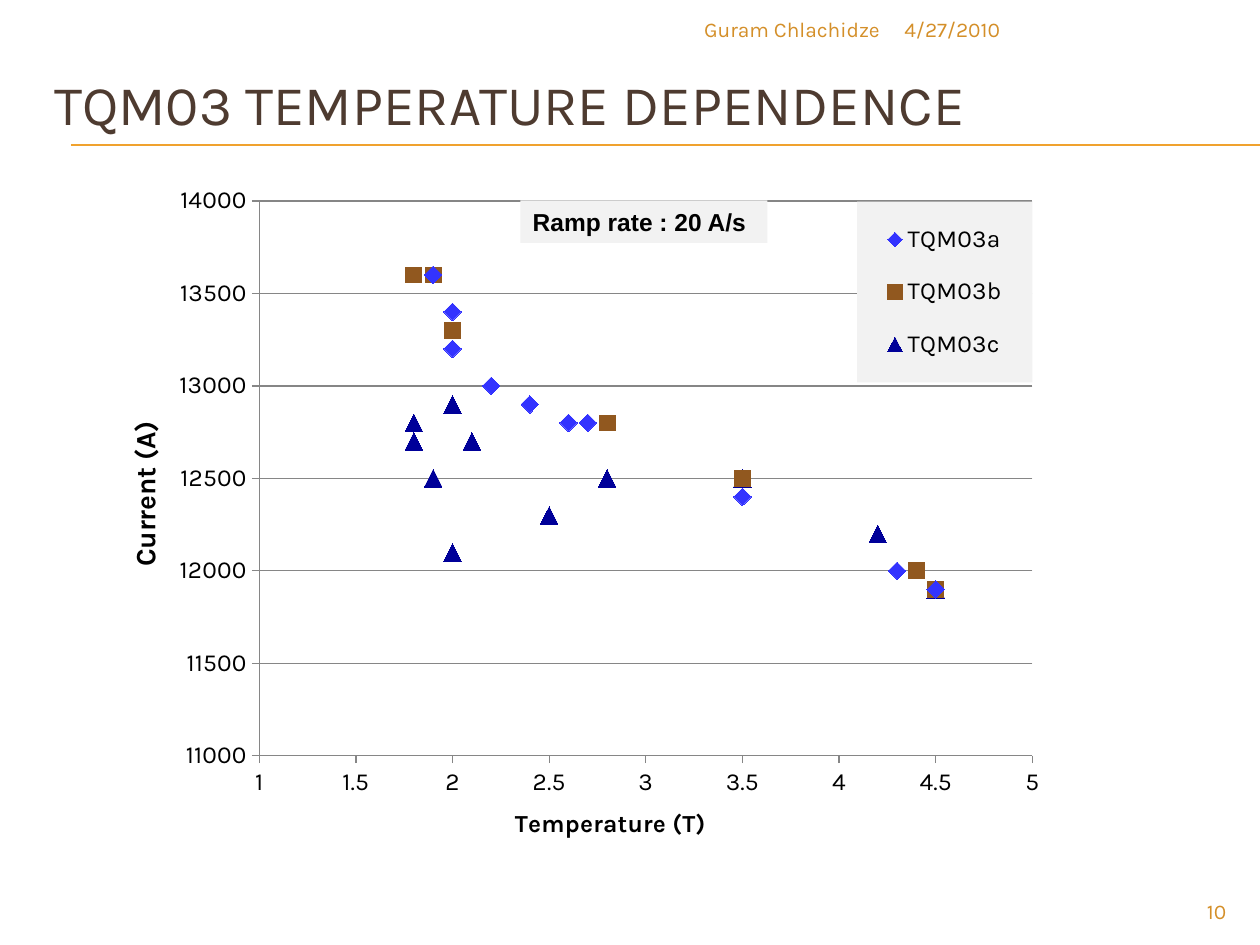
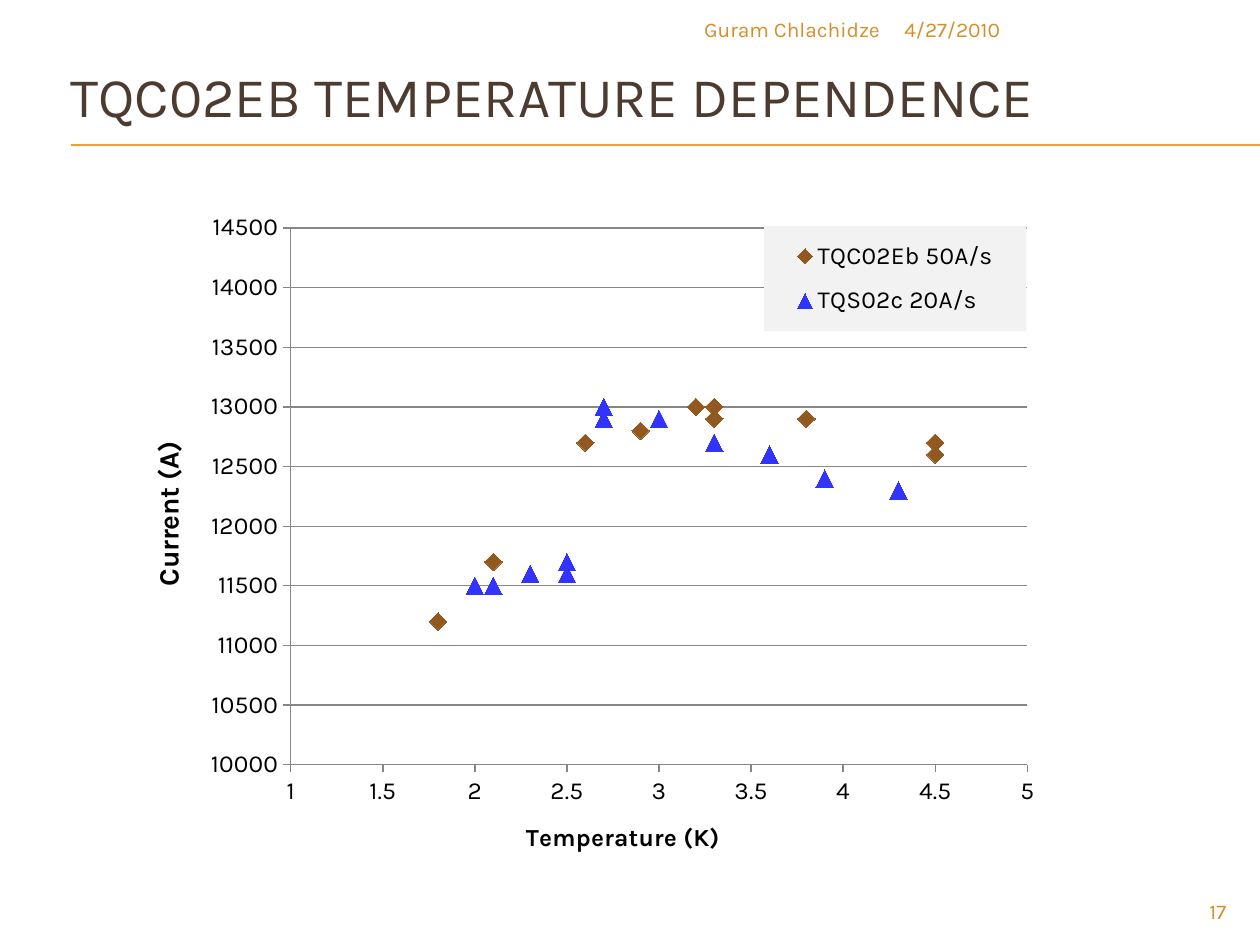
from dataclasses import dataclass
from typing import Optional

from lxml import etree
from pptx import Presentation
from pptx.chart.data import XyChartData
from pptx.dml.color import RGBColor
from pptx.enum.chart import XL_CHART_TYPE, XL_LEGEND_POSITION, XL_MARKER_STYLE, XL_TICK_MARK
from pptx.enum.shapes import MSO_CONNECTOR, MSO_SHAPE
from pptx.enum.text import MSO_ANCHOR, PP_ALIGN
from pptx.oxml.ns import qn
from pptx.util import Cm, Pt

SCATTER = XL_CHART_TYPE.XY_SCATTER
DIAMOND = XL_MARKER_STYLE.DIAMOND
SQUARE = XL_MARKER_STYLE.SQUARE
TRIANGLE = XL_MARKER_STYLE.TRIANGLE
LEFT, RIGHT = PP_ALIGN.LEFT, PP_ALIGN.RIGHT
TOP, MIDDLE = MSO_ANCHOR.TOP, MSO_ANCHOR.MIDDLE

FONT = "Karla"
GOLD, OCHRE, COCOA = "F0A22E", "D48F29", "4E3B30"
BLUE, BROWN, NAVY = "3333FF", "91581F", "000099"
BLACK, PALE, GREY = "000000", "F2F2F2", "868686"
NA = None  # reading not taken

Box = tuple[float, float, float, float]
Point = tuple[float, float]


@dataclass
class Series:
    name: str
    marker: XL_MARKER_STYLE
    size: int
    color: str
    temperatures: list[Optional[float]]
    currents: list[Optional[int]]


@dataclass
class ScatterSlide:
    title: str
    title_box: Box
    number: int
    chart_box: Box
    plot: Box               # fractions of the chart, as are the next three
    legend: Box
    x_title_at: Point
    y_title_at: Point
    x_title: str
    y_range: tuple[int, int]
    series: list[Series]
    note: Optional[str] = None


SLIDES = [
    ScatterSlide(
        "TQM03 TEMPERATURE DEPENDENCE", (0.84, 0.91, 24.13, 2.34), 10,
        chart_box=(2.46, 3.61, 18.69, 13.46),
        plot=(0.148, 0.033, 0.834, 0.832),
        legend=(0.793, 0.034, 0.189, 0.271),
        x_title_at=(0.419, 0.936), y_title_at=(0, 0.356),
        x_title="Temperature (T)", y_range=(11000, 14000),
        series=[
            Series("TQM03a", DIAMOND, 10, BLUE,
                   [4.5, 4.5, 1.9, 1.9, NA, 2.7, NA, 2.2, 2.2, 2.6, 2.6, 3.5, 3.5, NA, 4.5, 4.5,
                    NA, NA, 1.9, 1.9, 2, 2, 2, 2.1, NA, 2.4, 2.2, NA, 4.3, NA, 4.4],
                   [NA, NA, 13600, NA, NA, 12800, NA, 13000, NA, NA, 12800, NA, 12400, NA,
                    11900, NA, NA, NA, 13600, NA, NA, 13400, 13200, NA, NA, 12900, NA, NA,
                    12000, NA, NA]),
            Series("TQM03b", SQUARE, 9, BROWN,
                   [4.4, 4.4, NA, 1.9, 1.8, NA, 1.9, NA, 2, 2, 2.7, 2.8, 3.5, 3.5, 4.5, NA],
                   [12000, NA, NA, 13600, 13600, NA, NA, NA, 13300, NA, NA, 12800, 12500, NA,
                    11900, 11900]),
            Series("TQM03c", TRIANGLE, 10, NAVY,
                   [4.5, 4.5, 4.5, NA, 2, 2.5, 2.6, 3.5, 3.5, NA, 4.2, NA, 1.9, 1.8, 1.8, 1.9,
                    NA, 1.9, 1.9, 2, NA, 2.1, 2.1, 2.8, 2.8, 3.5, 3.5],
                   [11900, 11900, NA, NA, 12100, 12300, NA, NA, NA, NA, 12200, NA, 12500,
                    12800, 12700, 12500, NA, NA, NA, 12900, NA, NA, 12700, NA, 12500, 12500,
                    NA]),
        ],
        note="Ramp rate : 20 A/s"),
    ScatterSlide(
        "TQC02EB TEMPERATURE DEPENDENCE", (1.17, 0.97, 22.86, 1.9), 17,
        chart_box=(2.72, 4.04, 18.82, 13.31),
        plot=(0.167, 0.042, 0.789, 0.813),
        legend=(0.674, 0.039, 0.281, 0.159),
        x_title_at=(0.414, 0.934), y_title_at=(0.011, 0.357),
        x_title="Temperature (K)", y_range=(10000, 14500),
        series=[
            Series("TQC02Eb 50A/s", DIAMOND, 10, BROWN,
                   [4.5, 1.8, 2.1, 2.6, 2.9, 3.3, 3.3, 3.2, 3.2, 3.2, 3.2, 3.8, 4.5],
                   [12700, 11200, 11700, 12700, 12800, 12900, 13000, 13000, 13000, 13000,
                    13000, 12900, 12600]),
            Series("TQS02c 20A/s", TRIANGLE, 10, BLUE,
                   [2.5, 3, 2.7, 2.3, 2.5, 2, 3.6, 3.3, 2.7, 2.1, 3.9, 4.3],
                   [11700, 12900, 12900, 11600, 11600, 11500, 12600, 12700, 13000, 11500,
                    12400, 12300]),
        ]),
]


def rgb(color: str) -> RGBColor:
    return RGBColor.from_string(color)


def cm(box: Box) -> list[Cm]:
    return [Cm(v) for v in box]


def write(tf, text: str, size=12, color=OCHRE, bold=False, font=FONT, align=None) -> None:
    p = tf.paragraphs[0]
    if align is not None:
        p.alignment = align
    r = p.add_run()
    r.text = text
    r.font.name, r.font.size, r.font.bold = font, Pt(size), bold
    r.font.color.rgb = rgb(color)


def add_text(s, box: Box, text: str, anchor=TOP, **fmt) -> None:
    tf = s.shapes.add_textbox(*cm(box)).text_frame
    tf.word_wrap = True
    tf.vertical_anchor = anchor
    write(tf, text, **fmt)


# Shared frame: double rule, title, author, date, page number
def add_frame(s, d: ScatterSlide) -> None:
    for y in (2.92, 2.94):
        rule = s.shapes.add_connector(MSO_CONNECTOR.STRAIGHT, Cm(1.43), Cm(y), Cm(25.4), Cm(y))
        rule.line.color.rgb = rgb(GOLD)
        rule.line.width = Pt(0.75)
        etree.SubElement(rule._element.spPr, qn("a:effectLst"))
    add_text(s, d.title_box, d.title, MIDDLE, size=32, color=COCOA)
    add_text(s, (17.98, 0.2, 6.99, 0.81), "4/27/2010")
    add_text(s, (9.94, 0.2, 8.05, 0.81), "Guram Chlachidze", align=RIGHT)
    add_text(s, (22.86, 17.98, 2.11, 0.69), str(d.number), align=RIGHT)


def place(parent, place_after: Optional[str], values, inner=False) -> None:
    """Give a chart part a manual layout in fractions of the chart."""
    for old in parent.findall(qn("c:layout")):
        parent.remove(old)
    layout = etree.Element(qn("c:layout"))
    manual = etree.SubElement(layout, qn("c:manualLayout"))
    settings = [("layoutTarget", "inner")] if inner else []
    settings += [("xMode", "edge"), ("yMode", "edge"), *zip("xywh", values)]
    for tag, value in settings:
        etree.SubElement(manual, qn(f"c:{tag}")).set("val", str(value))
    if place_after:
        parent.find(qn(place_after)).addnext(layout)
    else:
        parent.insert(0, layout)


def style_axis(axis, limits, step: float, title: str, title_size: int, title_at: Point) -> None:
    axis.minimum_scale, axis.maximum_scale = limits
    axis.major_unit = step
    axis.major_tick_mark = XL_TICK_MARK.OUTSIDE
    axis.minor_tick_mark = XL_TICK_MARK.NONE
    axis.format.line.color.rgb = rgb(GREY)
    axis.tick_labels.font.size = Pt(14)
    axis.tick_labels.number_format = "General"
    axis.tick_labels.number_format_is_linked = False
    write(axis.axis_title.text_frame, title, size=title_size, color=BLACK, bold=True)
    place(axis.axis_title._element, "c:tx", title_at)


def style_legend(chart, box: Box) -> None:
    chart.has_legend = True
    legend = chart.legend
    legend.position = XL_LEGEND_POSITION.RIGHT
    legend.include_in_layout = False
    legend.font.size = Pt(14)
    place(legend._element, "c:legendPos", box)
    sppr = etree.Element(qn("c:spPr"))
    fill = etree.SubElement(sppr, qn("a:solidFill"))
    etree.SubElement(fill, qn("a:srgbClr")).set("val", PALE)
    legend._element.find(qn("c:txPr")).addprevious(sppr)


def drop_missing(chart) -> None:
    """Leave a gap where a reading was not taken."""
    for pt in list(chart._chartSpace.iter(qn("c:pt"))):
        if pt.find(qn("c:v")).text in (None, "", "None"):
            pt.getparent().remove(pt)


def add_scatter(s, d: ScatterSlide) -> None:
    data = XyChartData()
    for item in d.series:
        series = data.add_series(item.name)
        for x, y in zip(item.temperatures, item.currents):
            series.add_data_point(x, y)
    chart = s.shapes.add_chart(SCATTER, *cm(d.chart_box), data).chart
    drop_missing(chart)
    chart.has_title = False
    chart.font.name, chart.font.size = FONT, Pt(10)
    chart.font.color.rgb = rgb(BLACK)
    chart.plots[0].vary_by_categories = False

    for series, item in zip(chart.plots[0].series, d.series):
        series.smooth = False
        series.format.line.fill.background()
        series.marker.style, series.marker.size = item.marker, item.size
        fmt = series.marker.format
        fmt.fill.solid()
        fmt.fill.fore_color.rgb = rgb(item.color)
        fmt.line.color.rgb = rgb(item.color)

    x_axis, y_axis = chart.category_axis, chart.value_axis
    style_axis(x_axis, (1, 5), 0.5, d.x_title, 14, d.x_title_at)
    style_axis(y_axis, d.y_range, 500, "Current (A)", 16, d.y_title_at)
    x_axis.has_major_gridlines = False
    y_axis.has_major_gridlines = True
    y_axis.major_gridlines.format.line.color.rgb = rgb(GREY)
    body = y_axis.axis_title.text_frame._element.find(qn("a:bodyPr"))
    body.set("rot", "-5400000")
    body.set("vert", "horz")

    style_legend(chart, d.legend)
    place(chart._chartSpace.chart.plotArea, None, d.plot, inner=True)


def add_note(s, text: str) -> None:
    sp = s.shapes.add_shape(MSO_SHAPE.RECTANGLE, *cm((10.49, 4.04, 4.98, 0.86)))
    sp.shadow.inherit = False
    sp.fill.solid()
    sp.fill.fore_color.rgb = rgb(PALE)
    sp.line.fill.background()
    sp.text_frame.word_wrap = False
    sp.text_frame.vertical_anchor = TOP
    write(sp.text_frame, text, size=14, color=BLACK, bold=True, font="Arial", align=LEFT)


def main() -> None:
    prs = Presentation()
    prs.slide_width, prs.slide_height = Cm(25.4), Cm(19.05)
    for d in SLIDES:
        s = prs.slides.add_slide(prs.slide_layouts[6])
        add_frame(s, d)
        add_scatter(s, d)
        if d.note:
            add_note(s, d.note)
    prs.save("out.pptx")


if __name__ == "__main__":
    main()
